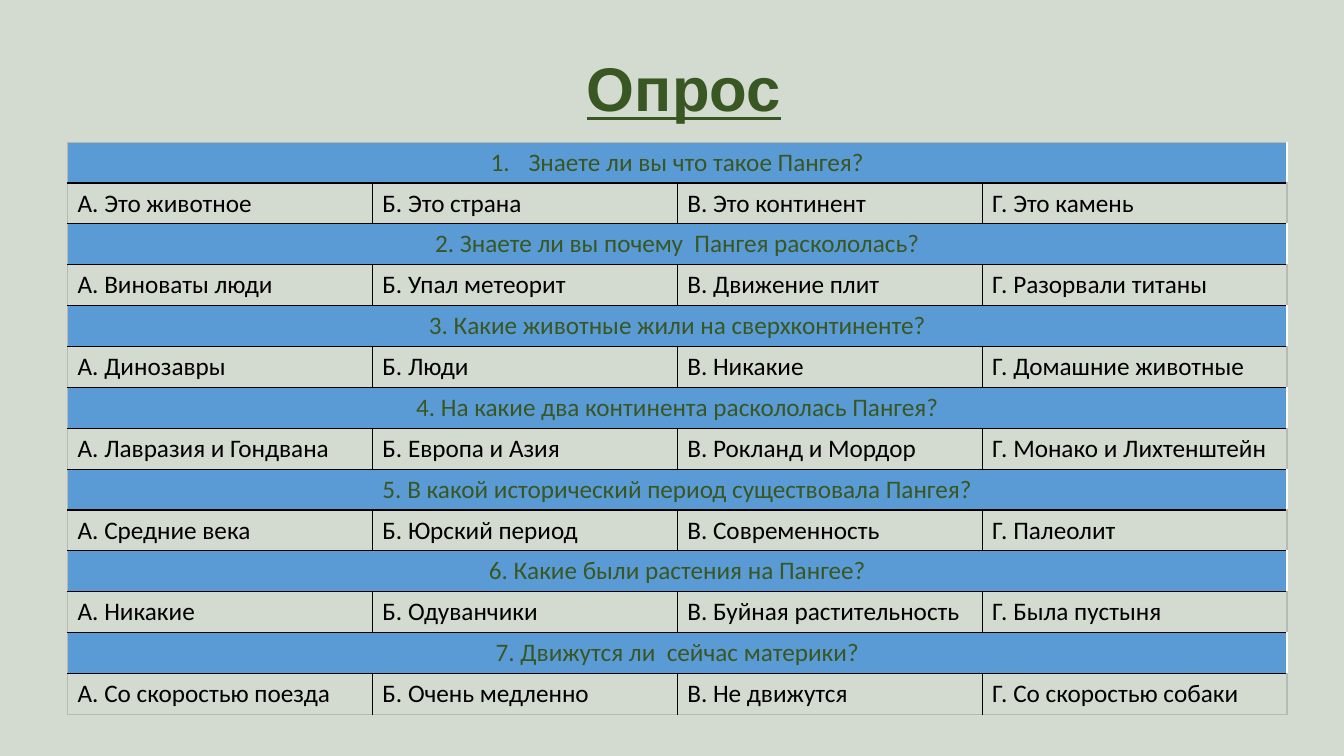
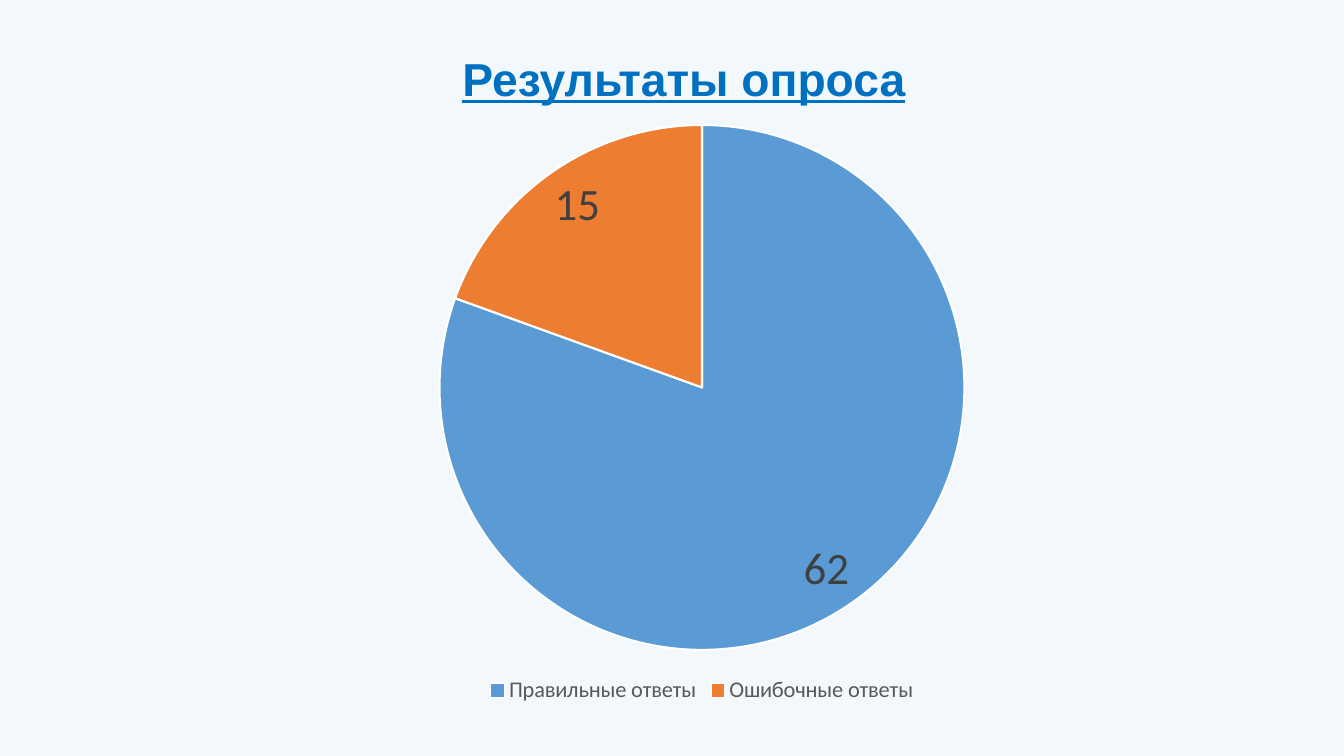
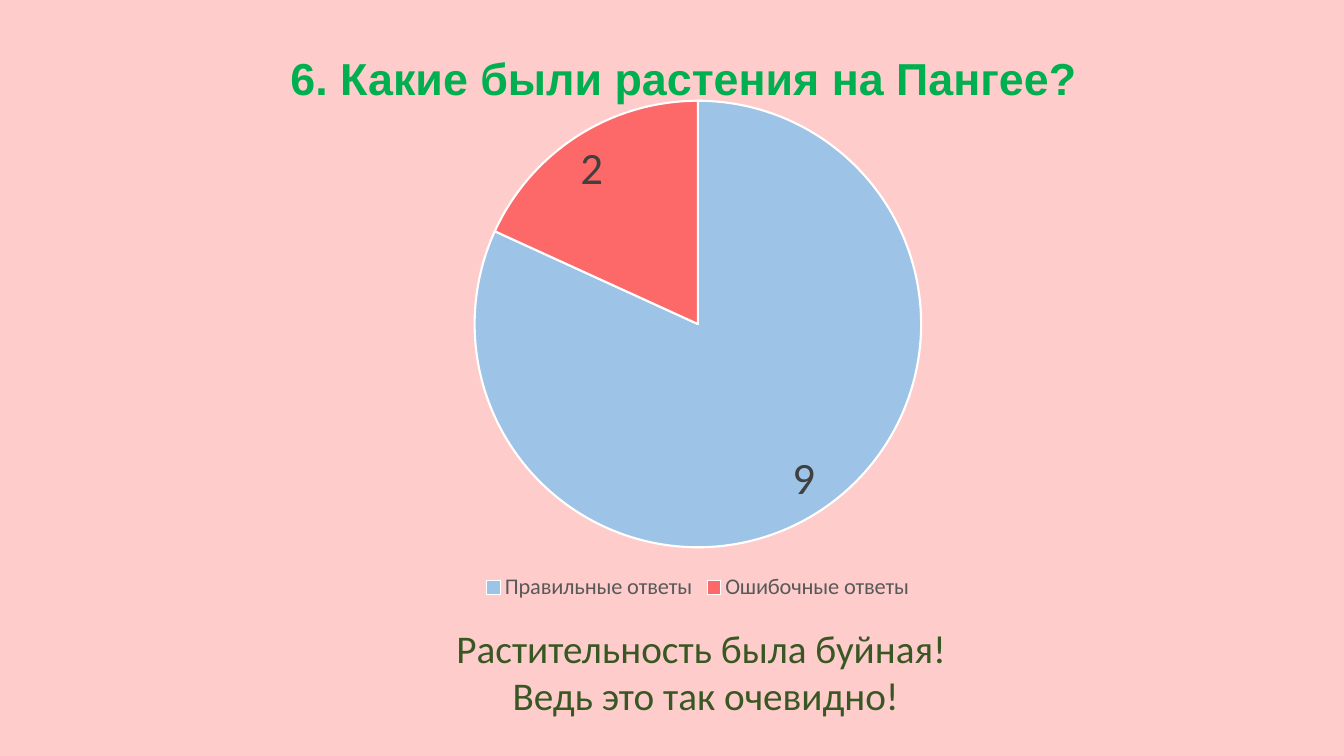
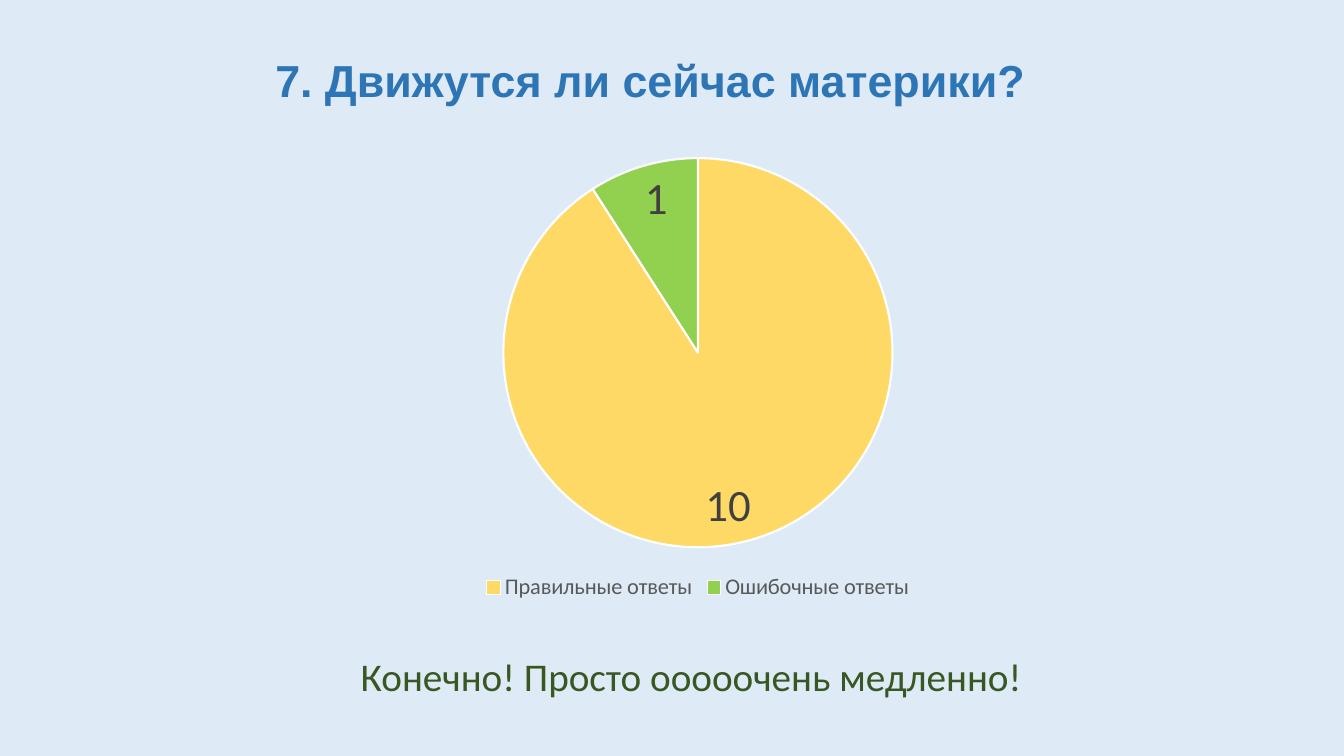
from lxml import etree
from pptx import Presentation
from pptx.chart.data import CategoryChartData
from pptx.dml.color import RGBColor
from pptx.enum.chart import XL_CHART_TYPE, XL_LABEL_POSITION, XL_LEGEND_POSITION
from pptx.enum.text import MSO_ANCHOR, MSO_AUTO_SIZE, PP_ALIGN
from pptx.oxml.ns import qn
from pptx.util import Pt

PIE = XL_CHART_TYPE.PIE
INSIDE_END = XL_LABEL_POSITION.INSIDE_END
BOTTOM = XL_LEGEND_POSITION.BOTTOM
TOP = MSO_ANCHOR.TOP
NO_FIT = MSO_AUTO_SIZE.NONE
LEFT, CENTER, JUSTIFY = PP_ALIGN.LEFT, PP_ALIGN.CENTER, PP_ALIGN.JUSTIFY

TITLE_FONT, BODY_FONT = "Arial", "Calibri"
GREEN, BLUE, BLACK, WHITE = "385723", "5B9BD5", "000000", "FFFFFF"
EDGE, LEGEND, LABEL = "B5BAB2", "595959", "404040"
WIDE_TITLE = (38.2, 32.4, 900.7, 46)
SMALL_CHART = (246.2, 62.6, 504.7, 370.1)
ANSWERS = ("Правильные ответы", "Ошибочные ответы")

SURVEY = [
    ("Знаете ли вы что такое Пангея?",
     ("А. Это животное", "Б. Это страна", "В. Это континент", "Г. Это камень")),
    ("2. Знаете ли вы почему  Пангея раскололась?",
     ("А. Виноваты люди", "Б. Упал метеорит", "В. Движение плит", "Г. Разорвали титаны")),
    ("3. Какие животные жили на сверхконтиненте?",
     ("А. Динозавры", "Б. Люди", "В. Никакие", "Г. Домашние животные")),
    ("4. На какие два континента раскололась Пангея?",
     ("А. Лавразия и Гондвана", "Б. Европа и Азия", "В. Рокланд и Мордор",
      "Г. Монако и Лихтенштейн")),
    ("5. В какой исторический период существовала Пангея?",
     ("А. Средние века", "Б. Юрский период", "В. Современность", "Г. Палеолит")),
    ("6. Какие были растения на Пангее?",
     ("А. Никакие", "Б. Одуванчики", "В. Буйная растительность", "Г. Была пустыня")),
    ("7. Движутся ли  сейчас материки?",
     ("А. Со скоростью поезда", "Б. Очень медленно", "В. Не движутся",
      "Г. Со скоростью собаки")),
]


def rgb(value):
    """Turn a hex string into a colour."""
    return RGBColor.from_string(value)


def set_font(font, size, color, name=BODY_FONT):
    """Set the size, colour and typeface of a font."""
    font.size, font.name = Pt(size), name
    font.color.rgb = rgb(color)


def add_slide(prs, background, title, size, color, box=WIDE_TITLE,
              align=CENTER, underline=False, spacing=1.0):
    """Add a slide with a plain background and a bold title."""
    s = prs.slides.add_slide(prs.slide_layouts[5])
    s.background.fill.solid()
    s.background.fill.fore_color.rgb = rgb(background)
    sp = s.shapes.title
    sp.left, sp.top, sp.width, sp.height = map(Pt, box)
    tf = sp.text_frame
    tf.text = title
    tf.auto_size, tf.vertical_anchor, tf.word_wrap = NO_FIT, TOP, True
    p = tf.paragraphs[0]
    p.alignment, p.line_spacing = align, spacing
    set_font(p.font, size, color, TITLE_FONT)
    p.font.bold, p.font.underline = True, underline
    return s


def set_borders(cell, **colors):
    """Draw 1 pt lines on the given sides of a cell."""
    tc_pr = cell._tc.get_or_add_tcPr()
    for i, side in enumerate(side for side in ("L", "R", "T", "B") if side in colors):
        ln = etree.Element(qn(f"a:ln{side}"), w=str(Pt(1)))
        fill = etree.SubElement(ln, qn("a:solidFill"))
        etree.SubElement(fill, qn("a:srgbClr"), val=colors[side])
        tc_pr.insert(i, ln)


def fill_cell(cell, text, color, align):
    """Write one line of text into a cell."""
    cell.text = text
    p = cell.text_frame.paragraphs[0]
    p.alignment = align
    set_font(p.font, 18, color)


def number_paragraph(p, indent):
    """Give a paragraph an automatic number with a hanging indent."""
    p_pr = p._p.get_or_add_pPr()
    p_pr.set("marL", str(Pt(indent)))
    p_pr.set("indent", str(-Pt(indent)))
    bullet = etree.Element(qn("a:buAutoNum"), type="arabicPeriod")
    p_pr.insert_element_before(bullet, "a:tabLst", "a:defRPr", "a:extLst")


def add_survey(s, survey):
    """Add a table with a merged question row above each row of answers."""
    rows, cols = 2 * len(survey), len(survey[0][1])
    frame = s.shapes.add_table(rows, cols, Pt(48.2), Pt(101.5), Pt(871.2), Pt(409))
    table = frame.table
    table.first_row = table.horz_banding = False
    for i, (question, answers) in enumerate(survey):
        for j, answer in enumerate(answers):
            cell = table.cell(2 * i + 1, j)
            fill_cell(cell, answer, BLACK, LEFT)
            cell.fill.background()
            set_borders(cell, L=BLACK if j else EDGE,
                        R=BLACK if j < cols - 1 else EDGE, T=BLACK,
                        B=BLACK if i < len(survey) - 1 else EDGE)
            heading = table.cell(2 * i, j)
            heading.fill.solid()
            heading.fill.fore_color.rgb = rgb(BLUE)
            sides = {"T": BLACK if i else EDGE, "B": BLACK}
            if j in (0, cols - 1):
                sides["R" if j else "L"] = EDGE
            set_borders(heading, **sides)
        heading = table.cell(2 * i, 0)
        heading.merge(table.cell(2 * i, cols - 1))
        fill_cell(heading, question, GREEN, CENTER)
    number_paragraph(table.cell(0, 0).text_frame.paragraphs[0], 27)


def place_plot(chart, x, y, w, h):
    """Fix the inner plot area as fractions of the chart."""
    area = chart.plots[0]._element.getparent()
    for old in area.findall(qn("c:layout")):
        area.remove(old)
    layout = etree.Element(qn("c:layout"))
    manual = etree.SubElement(layout, qn("c:manualLayout"))
    values = {"layoutTarget": "inner", "xMode": "edge", "yMode": "edge",
              "x": x, "y": y, "w": w, "h": h}
    for tag, value in values.items():
        etree.SubElement(manual, qn(f"c:{tag}"), val=str(value))
    area.insert(0, layout)


def add_pie(s, box, pie_top, diameter, values, colors):
    """Add a centred pie chart with value labels and a legend below."""
    left, top, width, height = box
    data = CategoryChartData()
    data.categories = ANSWERS
    data.add_series("Series 1", values)
    chart = s.shapes.add_chart(PIE, *map(Pt, box), data).chart
    chart.has_title = False
    set_font(chart.font, 10, BLACK)
    chart.has_legend = True
    chart.legend.position, chart.legend.include_in_layout = BOTTOM, False
    set_font(chart.legend.font, 16, LEGEND)
    plot = chart.plots[0]
    plot.vary_by_categories = plot.has_data_labels = True
    labels = plot.data_labels
    labels.show_value, labels.position = True, INSIDE_END
    set_font(labels.font, 32, LABEL)
    for i, color in enumerate(colors):
        fmt = plot.series[0].points[i].format
        fmt.fill.solid()
        fmt.fill.fore_color.rgb = rgb(color)
        fmt.line.color.rgb = rgb(WHITE)
        fmt.line.width = Pt(1.5)
    place_plot(chart, (width - diameter) / 2 / width, (pie_top - top) / height,
               diameter / width, diameter / height)


def add_caption(s, box, *lines):
    """Add centred lines of text below a chart."""
    tf = s.shapes.add_textbox(*map(Pt, box)).text_frame
    tf.text = "\n".join(lines)
    tf.word_wrap = False
    for p in tf.paragraphs:
        p.alignment = CENTER
        set_font(p.font, 28, GREEN)


def main():
    """Build the four survey slides."""
    prs = Presentation()
    prs.slide_width, prs.slide_height = Pt(960), Pt(540)

    s = add_slide(prs, "D3DACF", "Опрос", 44, GREEN, underline=True)
    add_survey(s, SURVEY)

    s = add_slide(prs, "F2F8FC", "Результаты опроса", 33, "0070C0", underline=True)
    add_pie(s, (181.4, 79.2, 640.1, 427), 89.3, 375, (62, 15), (BLUE, "ED7D31"))

    s = add_slide(prs, "FFCCCC", "6. Какие были растения на Пангее?", 32, "00B050")
    add_pie(s, SMALL_CHART, 72, 319, (9, 2), ("9DC3E6", "FD6969"))
    add_caption(s, (316.8, 442.1, 374.4, 74.9),
                "Растительность была буйная! ", "Ведь это так очевидно!")

    s = add_slide(prs, "DEEBF7", "7. Движутся ли сейчас материки?", 32, "2E75B6",
                  box=(189.4, 31.7, 568.8, 49), align=JUSTIFY, spacing=1.07)
    add_pie(s, SMALL_CHART, 113, 278, (10, 1), ("FFD966", "92D050"))
    add_caption(s, (247.7, 462.2, 498.2, 41), "Конечно! Просто ооооочень медленно! ")

    prs.save("out.pptx")


if __name__ == "__main__":
    main()
